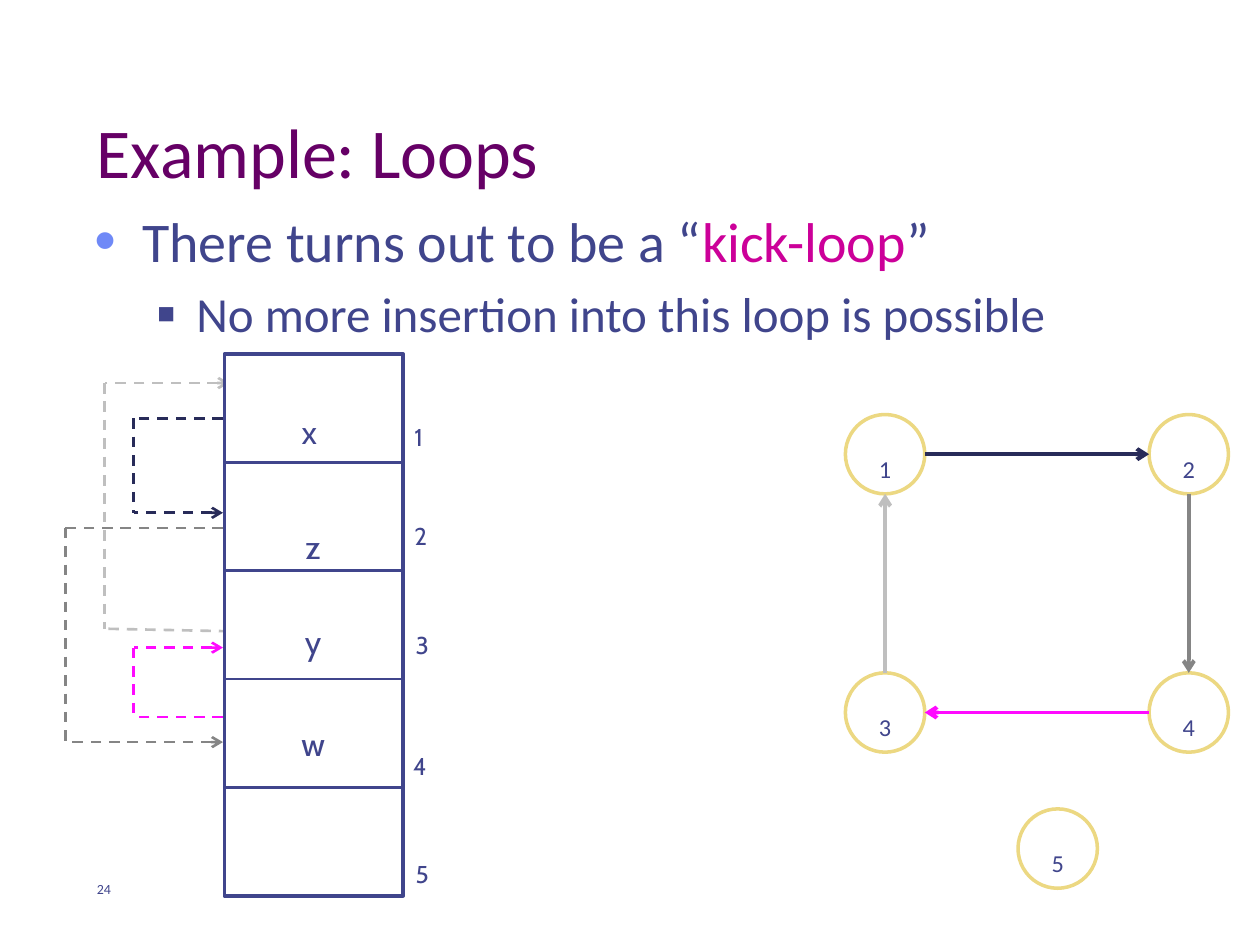
from itertools import product

from lxml.etree import SubElement
from pptx import Presentation
from pptx.dml.color import RGBColor
from pptx.enum.dml import MSO_LINE
from pptx.enum.shapes import MSO_CONNECTOR, MSO_SHAPE
from pptx.enum.text import MSO_ANCHOR, PP_ALIGN
from pptx.oxml.ns import qn
from pptx.util import Inches, Pt

PURPLE = RGBColor(0x66, 0x00, 0x66)
INDIGO = RGBColor(0x40, 0x45, 0x8C)
PERIWINKLE = RGBColor(0x6F, 0x89, 0xF7)
ROSE = RGBColor(0xCC, 0x00, 0x99)
NAVY = RGBColor(0x28, 0x2B, 0x59)
SILVER = RGBColor(0xBF, 0xBF, 0xBF)
GREY = RGBColor(0x85, 0x85, 0x85)
MAGENTA = RGBColor(0xFF, 0x0A, 0xFF)
GOLD = RGBColor(0xEC, 0xD8, 0x82)
WHITE = RGBColor(0xFF, 0xFF, 0xFF)


class SlideBuilder:
    heading_font = "Calibri"
    table_font = "Cabin"

    def __init__(self, slide):
        self.slide = slide

    def add_run(self, paragraph, text, size, color=INDIGO, font=heading_font, subscript=False):
        run = paragraph.add_run()
        run.text = text
        for name, value in {"size": Pt(size), "name": font}.items():
            setattr(run.font, name, value)
        run.font.color.rgb = color
        if subscript:
            run.font._element.set("baseline", "-25000")

    def frame(self, left, top, width, height, anchor=MSO_ANCHOR.TOP, wrap=True):
        box = self.slide.shapes.add_textbox(*map(Inches, (left, top, width, height)))
        for name, value in {"word_wrap": wrap, "vertical_anchor": anchor}.items():
            setattr(box.text_frame, name, value)
        return box.text_frame

    def text(self, text, place, size, anchor=MSO_ANCHOR.TOP, align=PP_ALIGN.LEFT, **run_format):
        paragraph = self.frame(*place, anchor=anchor).paragraphs[0]
        paragraph.alignment = align
        self.add_run(paragraph, text, size, **run_format)

    def bullet(self, paragraph, runs, size, symbol, color, scale, margin, indent):
        paragraph.space_before = Pt(size * 0.2)
        properties = paragraph._p.get_or_add_pPr()
        for name, value in {"marL": Inches(margin), "indent": Inches(indent)}.items():
            properties.set(name, str(int(value)))
        bullet_color = SubElement(properties, qn("a:buClr"))
        SubElement(bullet_color, qn("a:srgbClr"), val=str(color))
        SubElement(properties, qn("a:buSzPct"), val=str(scale * 1000))
        SubElement(properties, qn("a:buFont"), typeface="Arial")
        SubElement(properties, qn("a:buChar"), char=symbol)
        for text, run_color in runs:
            self.add_run(paragraph, text, size, run_color)

    def shape(self, kind, left, top, width, height, outline):
        shape = self.slide.shapes.add_shape(kind, *map(Inches, (left, top, width, height)))
        shape.shadow.inherit = False
        shape.fill.solid()
        shape.fill.fore_color.rgb = WHITE
        shape.line.color.rgb = outline
        shape.line.width = Pt(2)
        return shape

    def node(self, label, left, top):
        circle = self.shape(MSO_SHAPE.OVAL, left, top, NODE_SIZE, NODE_SIZE, GOLD)
        for name, value in {"word_wrap": False, "vertical_anchor": MSO_ANCHOR.MIDDLE}.items():
            setattr(circle.text_frame, name, value)
        paragraph = circle.text_frame.paragraphs[0]
        paragraph.alignment = PP_ALIGN.CENTER
        self.add_run(paragraph, label, 24, subscript=True)

    def line(self, start, end, color, width=1.5, dash=None, arrow=None):
        connector = self.slide.shapes.add_connector(
            MSO_CONNECTOR.STRAIGHT, *map(Inches, (*start, *end)))
        for name, value in {"width": Pt(width), "dash_style": dash}.items():
            setattr(connector.line, name, value)
        connector.line.color.rgb = color
        if arrow:
            SubElement(connector.line._get_or_add_ln(), qn(arrow), type="arrow")
        SubElement(connector._element.spPr, qn("a:effectLst"))

    def kick(self, color, spine, source, bend, target, edge):
        dash = MSO_LINE.DASH
        self.line((edge, source), (spine, bend), color, dash=dash)
        self.line((spine, min(bend, target)), (spine, max(bend, target)), color, dash=dash)
        self.line((edge, target), (spine, target), color, dash=dash, arrow="a:headEnd")


NODE_SIZE = 0.63
RADIUS = NODE_SIZE / 2
NODE_COLUMNS = (6.71, 9.12)
NODE_ROWS = (3.29, 5.34)
TABLE_LEFT, TABLE_TOP, TABLE_WIDTH, TABLE_HEIGHT = 1.78, 2.81, 1.42, 4.3
SLOT_COUNT = 5


def main():
    presentation = Presentation()
    presentation.slide_width = Inches(10)
    presentation.slide_height = Inches(7.5)
    builder = SlideBuilder(presentation.slides.add_slide(presentation.slide_layouts[6]))

    builder.text("Example: Loops", (0.67, 0.33, 8.75, 1.25), 40, MSO_ANCHOR.BOTTOM, color=PURPLE)
    body = builder.frame(0.65, 1.59, 8.75, 4.5)
    builder.bullet(
        body.paragraphs[0],
        [("There turns out to be a “", INDIGO), ("kick-loop", ROSE), ("”", INDIGO)],
        32, "•", PERIWINKLE, 110, 0.38, -0.38)
    insertion = body.add_paragraph()
    insertion.level = 1
    builder.bullet(
        insertion, [("No more insertion into this loop is possible", INDIGO)],
        28, "■", INDIGO, 60, 0.81, -0.31)

    for kick in (
        (NAVY, 1.06, 3.32, 3.32, 4.07, 1.77),
        (SILVER, 0.83, 5.01, 4.99, 3.04, 1.82),
        (GREY, 0.52, 4.19, 4.19, 5.89, 1.77),
        (MAGENTA, 1.06, 5.69, 5.69, 5.14, 1.77),
    ):
        builder.kick(*kick)

    for number, (top, left) in enumerate(product(NODE_ROWS, NODE_COLUMNS), 1):
        builder.node(str(number), left, top)
    builder.node("5", 8.08, 6.42)

    left_x, right_x = (column + RADIUS for column in NODE_COLUMNS)
    upper_y, lower_y = (row + RADIUS for row in NODE_ROWS)
    for start, end, color in (
        ((left_x + RADIUS, upper_y), (right_x - RADIUS, upper_y), NAVY),
        ((right_x, upper_y + RADIUS), (right_x, lower_y - RADIUS), GREY),
        ((right_x - RADIUS, lower_y), (left_x + RADIUS, lower_y), MAGENTA),
        ((left_x, lower_y - RADIUS), (left_x, upper_y + RADIUS), SILVER),
    ):
        builder.line(start, end, color, 2.25, arrow="a:tailEnd")

    builder.shape(MSO_SHAPE.RECTANGLE, TABLE_LEFT, TABLE_TOP, TABLE_WIDTH, TABLE_HEIGHT, INDIGO)
    for slot in range(1, SLOT_COUNT):
        divider = TABLE_TOP + slot * TABLE_HEIGHT / SLOT_COUNT
        builder.line((TABLE_LEFT, divider), (TABLE_LEFT + TABLE_WIDTH, divider), INDIGO)

    table_text = {"font": builder.table_font, "subscript": True}
    for key, left, top in (("x", 2.22, 2.96), ("z", 2.25, 3.87), ("y", 2.25, 4.62), ("w", 2.25, 5.43)):
        builder.text(key, (left, top, 0.47, 0.64), 32, MSO_ANCHOR.MIDDLE, PP_ALIGN.CENTER, **table_text)
    slot_labels = ((3.19, 3.08), (3.19, 3.86), (3.2, 4.73), (3.18, 5.69), (3.2, 6.55))
    for number, (left, top) in enumerate(slot_labels, 1):
        builder.text(str(number), (left, top, 0.39, 0.4), 24, **table_text)

    builder.text("24", (0.67, 6.67, 0.67, 0.5), 8, MSO_ANCHOR.BOTTOM)
    presentation.save("out.pptx")


if __name__ == "__main__":
    main()
